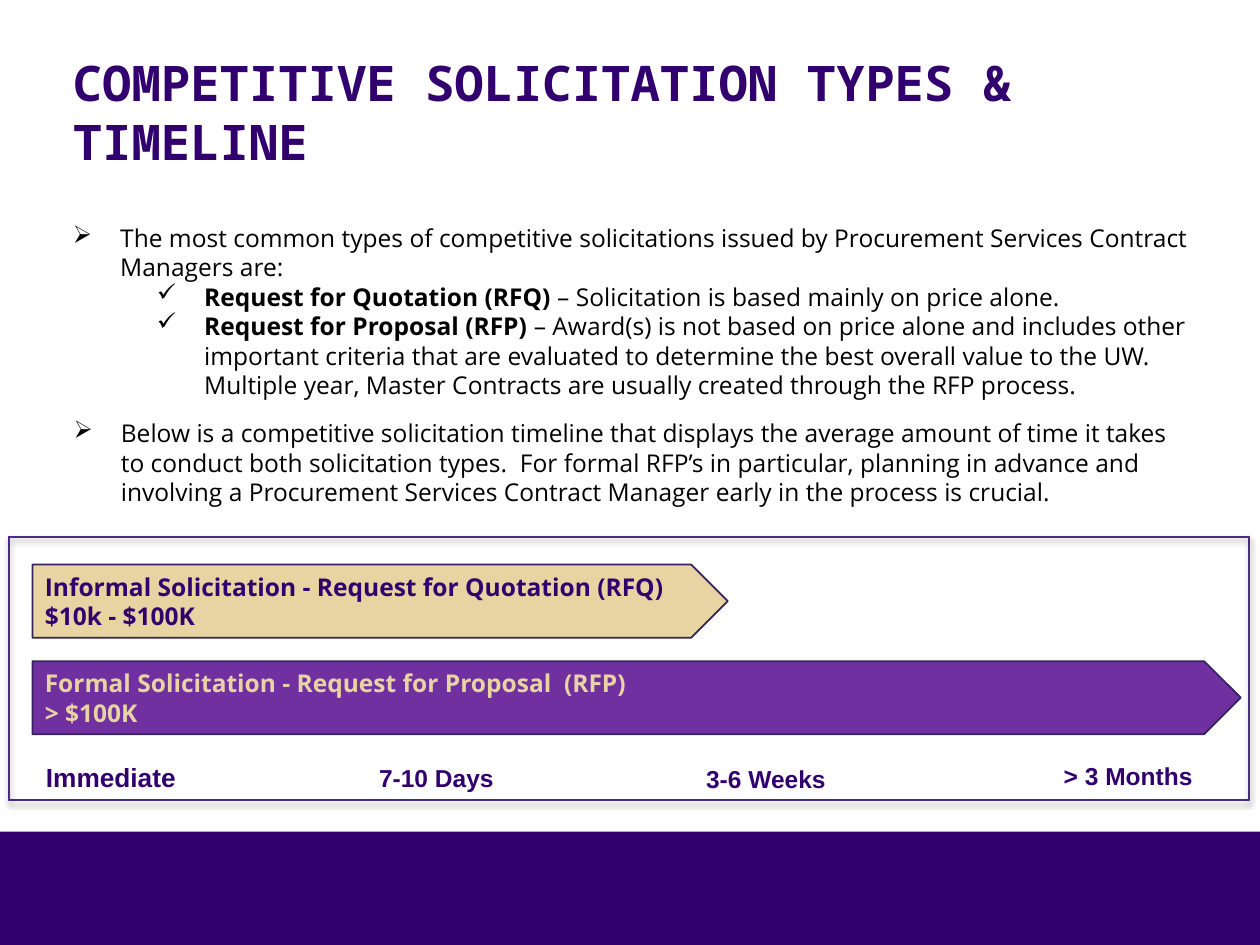
"""Build the slide on competitive solicitation types and their timeline."""
from dataclasses import dataclass

import lxml.etree
import pptx
import pptx.dml.color
import pptx.enum.shapes
import pptx.enum.text
import pptx.oxml.ns
import pptx.util

Pt = pptx.util.Pt
Shape = pptx.enum.shapes.MSO_SHAPE
Align = pptx.enum.text.PP_ALIGN
Anchor = pptx.enum.text.MSO_ANCHOR


@dataclass(frozen=True)
class Theme:
    purple: str = "32006E"
    violet: str = "7030A0"
    gold: str = "E8D3A2"
    outline: str = "372261"
    frame_line: str = "492B82"
    frame_dark: str = "472190"
    frame_light: str = "B7ABE0"
    black: str = "000000"
    title_font: str = "Noto Sans Mono"
    body_font: str = "Open Sans"
    label_font: str = "Arial"
    title_size: float = 28
    body_size: float = 14
    lead_label_size: float = 15
    leading: float = 1.2


THEME = Theme()


def rgb(value):
    return pptx.dml.color.RGBColor.from_string(value)


def apply(target, values):
    for name, value in values.items():
        setattr(target, name, value)


def add_xml(parent, tag, **attributes):
    element = lxml.etree.SubElement(parent, pptx.oxml.ns.qn(tag))
    for name, value in attributes.items():
        element.set(name, str(value))
    return element


def add_span(para, text, font, size, color, bold):
    span = para.add_run()
    span.text = text
    apply(span.font, {"name": font, "size": Pt(size), "bold": bold})
    span.font.color.rgb = rgb(color)


def add_bullet(para, symbol, left, level):
    para.level = level
    properties = para._p.get_or_add_pPr()
    properties.set("marL", str(Pt(left)))
    properties.set("indent", str(-Pt(27)))
    add_xml(properties, "a:buChar", char=symbol)


def add_box(page, place, anchor=Anchor.TOP):
    box = page.shapes.add_textbox(*map(Pt, place))
    apply(box.text_frame, {"word_wrap": True, "vertical_anchor": anchor})
    return box


def add_title(page, place, text):
    para = add_box(page, place, Anchor.BOTTOM).text_frame.paragraphs[0]
    para.line_spacing = Pt(THEME.title_size * THEME.leading)
    add_span(para, text, THEME.title_font, THEME.title_size, THEME.purple, True)


def add_bullets(page, place, items):
    frame = add_box(page, place).text_frame
    for index, (level, lead, text) in enumerate(items):
        para = frame.add_paragraph() if index else frame.paragraphs[0]
        symbol, left = (("➢", 27), ("✓", 75))[level]
        add_bullet(para, symbol, left, level)
        para.line_spacing = Pt(THEME.body_size * THEME.leading)
        for words, bold in ((lead, True), (text, False)):
            if words:
                add_span(para, words, THEME.body_font, THEME.body_size, THEME.black, bold)


def add_block(page, kind, place, fill, line=None, width=1):
    block = page.shapes.add_shape(kind, *map(Pt, place))
    block.shadow.inherit = False
    if fill:
        block.fill.solid()
        block.fill.fore_color.rgb = rgb(fill)
    if line:
        block.line.color.rgb = rgb(line)
        block.line.width = Pt(width)
    else:
        block.line.fill.background()
    return block


def add_arrow(page, place, fill, color, lines):
    arrow = add_block(page, Shape.PENTAGON, place, fill, THEME.outline)
    frame = arrow.text_frame
    apply(frame, {"word_wrap": True, "vertical_anchor": Anchor.MIDDLE})
    for index, text in enumerate(lines):
        para = frame.add_paragraph() if index else frame.paragraphs[0]
        apply(para, {"alignment": Align.LEFT,
                     "line_spacing": Pt(THEME.body_size * THEME.leading)})
        add_span(para, text, THEME.body_font, THEME.body_size, color, True)


def add_label(page, place, text, size):
    para = add_box(page, place).text_frame.paragraphs[0]
    para.alignment = Align.CENTER
    add_span(para, text, THEME.label_font, size, THEME.purple, True)


def add_frame(page, place):
    border = add_block(page, Shape.FRAME, place, None, THEME.frame_line, 0.75)
    border.adjustments[0] = 0.003
    border.fill.gradient()
    border.fill.gradient_angle = 90
    for stop, color in zip(border.fill.gradient_stops, (THEME.frame_dark, THEME.frame_light)):
        stop.color.rgb = rgb(color)
    effects = border._element.spPr.find(pptx.oxml.ns.qn("a:effectLst"))
    shadow = add_xml(effects, "a:outerShdw", blurRad=Pt(3.1), dist=Pt(1.8),
                     dir=5400000, rotWithShape=0)
    tint = add_xml(shadow, "a:srgbClr", val=THEME.black)
    add_xml(tint, "a:alpha", val=35000)


def main():
    deck = pptx.Presentation()
    apply(deck, {"slide_width": Pt(720), "slide_height": Pt(540)})
    page = deck.slides.add_slide(deck.slide_layouts[6])

    add_block(page, Shape.RECTANGLE, (0, 475.2, 720, 64.8), THEME.purple)
    add_title(page, (34.6, 22.3, 640, 78.5), "COMPETITIVE SOLICITATION TYPES & TIMELINE")
    add_bullets(page, (34.6, 123.8, 665.3, 108.7), [
        (0, "", "The most common types of competitive solicitations issued by "
                "Procurement Services Contract Managers are:"),
        (1, "Request for Quotation (RFQ)", " – Solicitation is based mainly on price alone."),
        (1, "Request for Proposal (RFP)",
         " – Award(s) is not based on price alone and includes other important criteria that "
         "are evaluated to determine the best overall value to the UW.  Multiple year, Master "
         "Contracts are usually created through the RFP process."),
    ])
    add_bullets(page, (35, 235.4, 640, 74.9), [
        (0, "", "Below is a competitive solicitation timeline that displays the average amount "
                "of time it takes to conduct both solicitation types.  For formal RFP’s in "
                "particular, planning in advance and involving a Procurement Services Contract "
                "Manager early in the process is crucial."),
    ])
    add_arrow(page, (18.5, 322.6, 397.4, 41.8), THEME.gold, THEME.purple,
              ("Informal Solicitation - Request for Quotation (RFQ)", "$10k - $100K"))
    add_arrow(page, (18.5, 377.8, 690.5, 41.8), THEME.violet, THEME.gold,
              ("Formal Solicitation - Request for Proposal  (RFP)", "> $100K"))
    for left, top, width, text, size in (
        (18.7, 431.3, 89.3, "Immediate", THEME.lead_label_size),
        (181.4, 432.7, 136, "7-10 Days", THEME.body_size),
        (367.2, 433, 141, "3-6 Weeks", THEME.body_size),
        (589.7, 431.3, 110, "> 3 Months", THEME.body_size),
    ):
        add_label(page, (left, top, width, 24.5), text, size)
    add_frame(page, (5, 306.7, 709.2, 150.5))
    deck.save("out.pptx")


if __name__ == "__main__":
    main()
